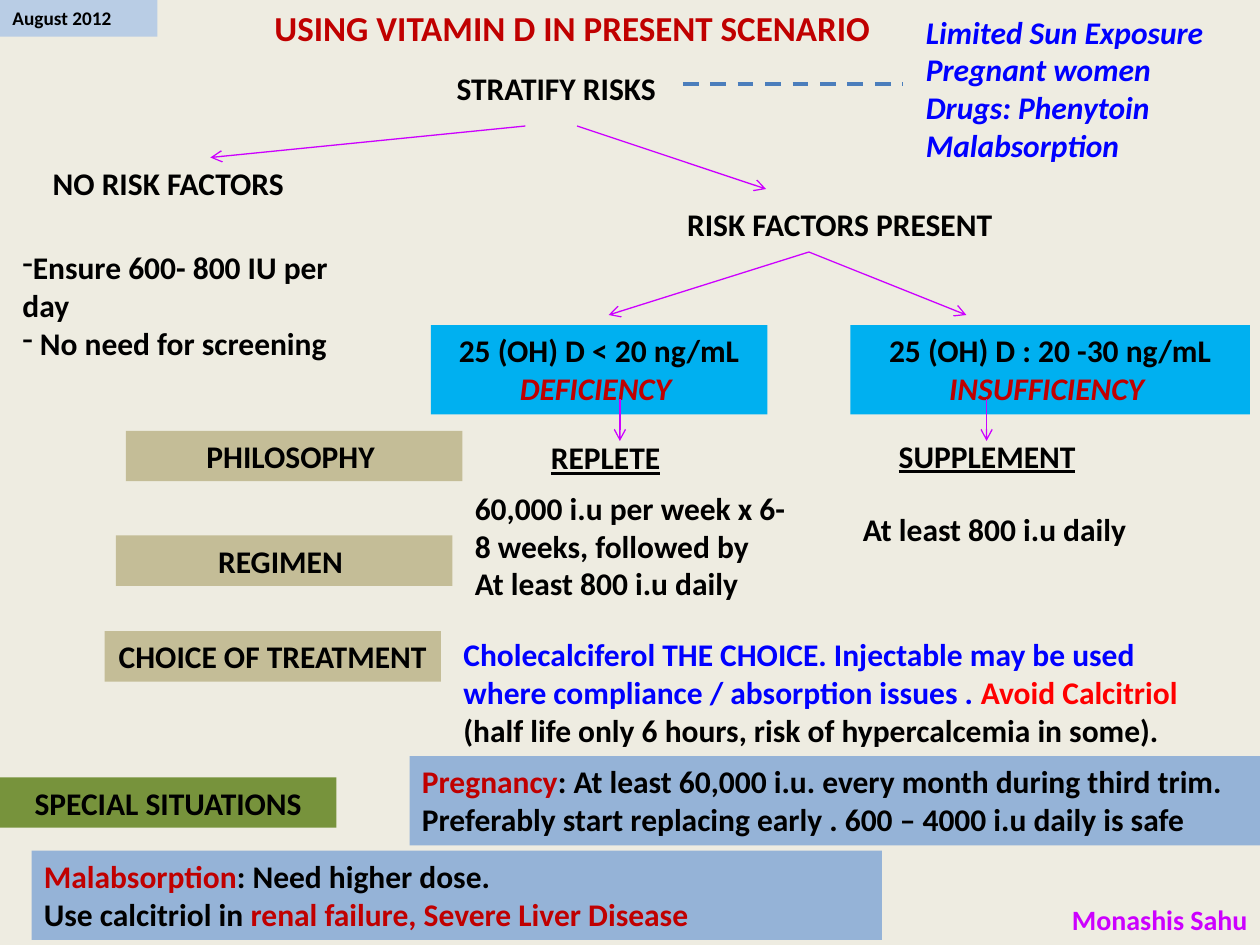
from lxml import etree
from pptx import Presentation
from pptx.dml.color import RGBColor
from pptx.enum.dml import MSO_LINE
from pptx.enum.shapes import MSO_CONNECTOR, MSO_SHAPE
from pptx.enum.text import MSO_ANCHOR, PP_ALIGN
from pptx.oxml.ns import qn
from pptx.util import Inches, Pt

LEFT, CENTER, RIGHT = PP_ALIGN.LEFT, PP_ALIGN.CENTER, PP_ALIGN.RIGHT
RECT, STRAIGHT, DASH = MSO_SHAPE.RECTANGLE, MSO_CONNECTOR.STRAIGHT, MSO_LINE.DASH
MIDDLE, TOP = MSO_ANCHOR.MIDDLE, MSO_ANCHOR.TOP
BLACK, RED, BLUE, PURPLE = "000000", "C00000", "0000FF", "CC00FF"
TAN, SKY, STEEL = "C4BD97", "00B0F0", "95B3D7"
W, H = 2.67, 0.4


def rgb(color):
    return RGBColor.from_string(color)


def add_text(box, paragraphs, align=LEFT, fill=None, size=18):
    """Each paragraph is a list of runs (text, colour, style); style holds i or u."""
    left, top, width, height = map(Inches, box)
    if fill:
        sp = s.shapes.add_shape(RECT, left, top, width, height)
        sp.shadow.inherit = False
        sp.fill.solid()
        sp.fill.fore_color.rgb = rgb(fill)
        sp.line.fill.background()
    else:
        sp = s.shapes.add_textbox(left, top, width, height)
    tf = sp.text_frame
    tf.word_wrap = True
    tf.vertical_anchor = TOP
    for i, runs in enumerate(paragraphs):
        p = tf.add_paragraph() if i else tf.paragraphs[0]
        p.alignment = align
        for text, color, style in runs:
            r = p.add_run()
            r.text = text
            r.font.name = "Calibri"
            r.font.size = Pt(size)
            r.font.bold = True
            r.font.italic = "i" in style
            r.font.underline = "u" in style
            r.font.color.rgb = rgb(color)
    return tf


prs = Presentation()
prs.slide_width, prs.slide_height = Inches(10), Inches(7.5)
s = prs.slides.add_slide(prs.slide_layouts[6])
s.background.fill.solid()
s.background.fill.fore_color.rgb = rgb("EEECE1")

# Date, author and title
add_text((0, 0, 1.25, 0.29), [[("August 2012", BLACK, "")]], fill="B9CDE5", size=11)
author = add_text((6.83, 7.1, 3.17, H), [[("Monashis Sahu", PURPLE, "")]], RIGHT, size=16)
author.vertical_anchor = MIDDLE
add_text((2.08, 0, 5.08, 0.44),
         [[("USING VITAMIN D IN PRESENT SCENARIO", RED, "")]], size=20)

# Centred one-line labels
for text, left, top, fill, style in [
    ("STRATIFY RISKS", 3.08, 0.5, None, ""),
    ("NO RISK FACTORS", 0, 1.25, None, ""),
    ("RISK FACTORS PRESENT", 5.33, 1.58, None, ""),
    ("REPLETE ", 3.5, 3.43, None, "u"),
    ("SUPPLEMENT", 6.5, 3.42, None, "u"),
    ("PHILOSOPHY ", 1, 3.42, TAN, ""),
    ("REGIMEN ", 0.92, 4.25, TAN, ""),
    ("CHOICE OF TREATMENT ", 0.83, 5.01, TAN, ""),
    ("SPECIAL SITUATIONS", 0, 6.17, "77933C", ""),
]:
    runs = [(text.rstrip(), BLACK, style)]
    if text.endswith(" "):
        runs.append((" ", BLACK, ""))
    add_text((left, top, W, H), [runs], CENTER, fill)

# Vitamin D levels
for left, width, level, name in [
    (3.42, 2.67, "25 (OH) D < 20 ng/mL", "DEFICIENCY "),
    (6.75, 3.17, "25 (OH) D : 20 -30 ng/mL", "INSUFFICIENCY "),
]:
    add_text((left, 2.58, width, 0.71), [[(level, BLACK, "")], [(name, RED, "i")]], CENTER, SKY)

# Risks and advice
risks = ["Limited Sun Exposure", "Pregnant women", "Drugs: Phenytoin", "Malabsorption"]
add_text((7.25, 0.05, W, 1.31), [[(risk, BLUE, "i")] for risk in risks])

advice = add_text((0.08, 1.92, W, 1.01), [
    [("Ensure 600- 800 IU per day", BLACK, "")],
    [(" No need for screening", BLACK, "")],
])
for p in advice.paragraphs:
    pPr = p._p.get_or_add_pPr()
    etree.SubElement(pPr, qn("a:buFontTx"))
    etree.SubElement(pPr, qn("a:buChar")).set("char", "-")

# Regimens and treatment
add_text((3.67, 3.83, W, 1.01), [
    [("60,000 i.u per week x 6-8 weeks, followed by", BLACK, "")],
    [("At least 800 i.u daily", BLACK, "")],
])
add_text((6.75, 4, W, H), [[("At least 800 i.u daily", BLACK, "")]])
add_text((3.58, 4.99, 5.92, 1.01), [[
    ("Cholecalciferol THE CHOICE. Injectable may be used where compliance / "
     "absorption issues . ", BLUE, ""),
    ("Avoid Calcitriol ", "FF0000", ""),
    ("(half life only 6 hours, risk of hypercalcemia in some).", BLACK, ""),
]])

# Special situations
add_text((3.25, 6, 6.75, 0.71), [
    [("Pregnancy", RED, ""),
     (": At least 60,000 i.u. every month during third trim.", BLACK, "")],
    [("Preferably start replacing early . 600 – 4000 i.u daily is safe", BLACK, "")],
], fill=STEEL)
add_text((0.25, 6.75, 6.75, 0.71), [
    [("Malabsorption", RED, ""), (": Need higher dose.", BLACK, "")],
    [("Use calcitriol in ", BLACK, ""), ("renal failure, Severe Liver Disease", RED, "")],
], fill=STEEL)

# Flow arrows and the dashed link to the risks
for x1, y1, x2, y2, dashed in [
    (4.17, 1, 1.67, 1.25, False),
    (4.58, 1, 6.08, 1.5, False),
    (6.42, 2, 4.83, 2.5, False),
    (6.42, 2, 7.67, 2.5, False),
    (4.92, 3.17, 4.92, 3.5, False),
    (7.83, 3.17, 7.83, 3.5, False),
    (5.42, 0.67, 7.17, 0.67, True),
]:
    line = s.shapes.add_connector(STRAIGHT, Inches(x1), Inches(y1), Inches(x2), Inches(y2))
    line.line.color.rgb = rgb("4B7EBC" if dashed else PURPLE)
    line.line.width = Pt(2.25 if dashed else 0.75)
    if dashed:
        line.line.dash_style = DASH
    else:
        etree.SubElement(line.line._get_or_add_ln(), qn("a:tailEnd")).set("type", "arrow")
    etree.SubElement(line._element.spPr, qn("a:effectLst"))

prs.save("out.pptx")
